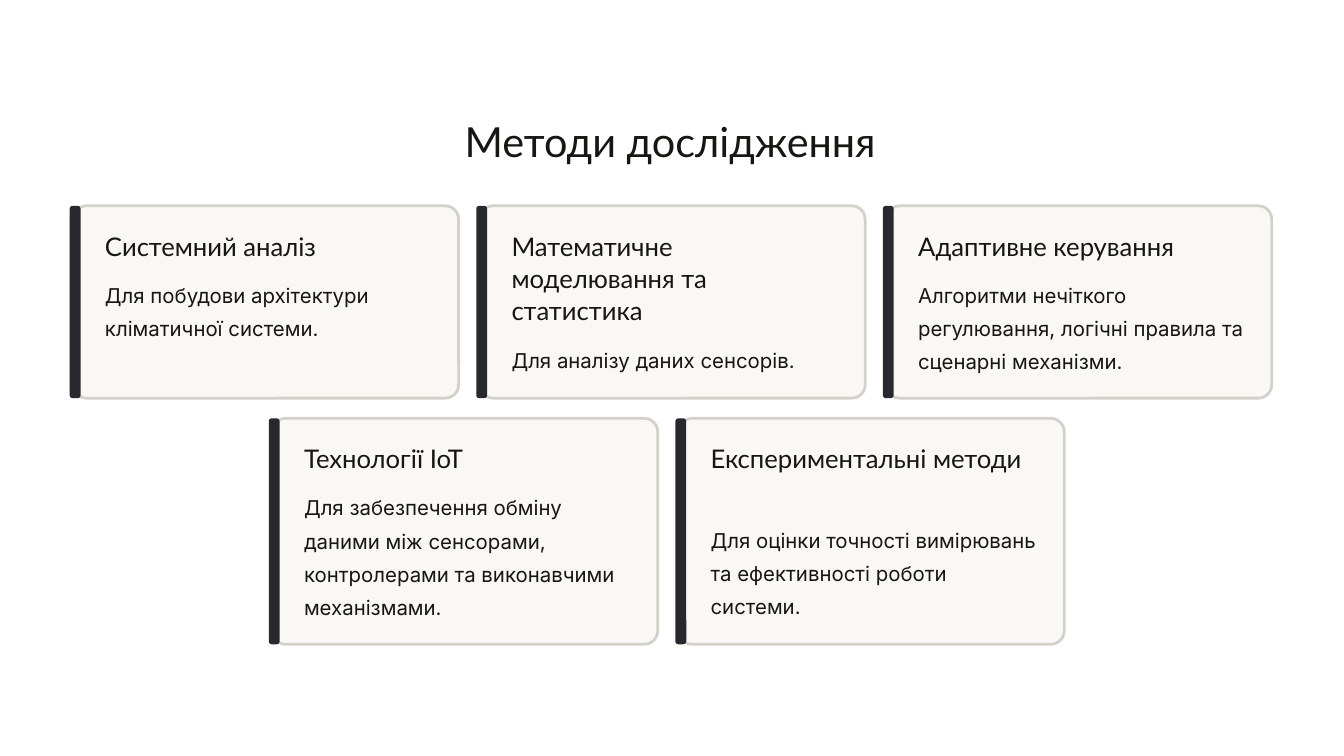
from pptx import Presentation
from pptx.dml.color import RGBColor
from pptx.enum.shapes import MSO_SHAPE as Shape
from pptx.enum.text import PP_ALIGN as Align
from pptx.util import Inches, Pt

INK = RGBColor(0x16, 0x16, 0x13)
CARD = RGBColor(0xF9, 0xF8, 0xF5)
BORDER = RGBColor(0xD3, 0xD1, 0xC9)
ACCENT = RGBColor(0x28, 0x28, 0x2F)

PITCH = 4.84
CARD_W = 4.59
ACCENT_W = 0.13
CARD_SHIFT = 0.04
PAD_X = 0.42
PAD_Y = 0.28
TEXT_W = 3.93
HEADING_LINE = 0.385
BODY_LINE = 0.4
HEADING_GAP = 0.15

ROWS = [
    (0.83, 2.45, 2.29, 0.07, [
        ("Системний аналіз", 1,
         "Для побудови архітектури кліматичної системи.", 2),
        ("Математичне моделювання та статистика", 3,
         "Для аналізу даних сенсорів.", 1),
        ("Адаптивне керування", 1,
         "Алгоритми нечіткого регулювання, логічні правила та сценарні механізми.", 3),
    ]),
    (3.2, 4.98, 2.69, 0.06, [
        ("Технології IoT", 1,
         "Для забезпечення обміну даними між сенсорами, контролерами та виконавчими механізмами.", 4),
        ("Експериментальні методи", 2,
         "Для оцінки точності вимірювань та ефективності роботи системи.", 3),
    ]),
]


def add_text(s, text, x, y, w, h, font, size, leading, align=Align.LEFT):
    tf = s.shapes.add_textbox(Inches(x), Inches(y), Inches(w), Inches(h)).text_frame
    tf.word_wrap = True
    tf.margin_left = tf.margin_right = tf.margin_top = tf.margin_bottom = 0
    p = tf.paragraphs[0]
    p.text = text
    p.alignment = align
    p.line_spacing = Pt(leading)
    r = p.runs[0]
    r.font.name = font
    r.font.size = Pt(size)
    r.font.color.rgb = INK


def add_panel(s, x, y, w, h, radius, fill, border=None):
    sp = s.shapes.add_shape(Shape.ROUNDED_RECTANGLE,
                            Inches(x), Inches(y), Inches(w), Inches(h))
    sp.adjustments[0] = radius
    sp.shadow.inherit = False
    sp.fill.solid()
    sp.fill.fore_color.rgb = fill
    if border is None:
        sp.line.fill.background()
    else:
        sp.line.color.rgb = border
        sp.line.width = Pt(2.4)


def add_card(s, x, y, h, radius, heading, heading_lines, body, body_lines):
    add_panel(s, x + CARD_SHIFT, y, CARD_W, h, radius, CARD, BORDER)
    add_panel(s, x, y, ACCENT_W, h, 0.28, ACCENT)
    heading_h = heading_lines * HEADING_LINE
    text_x, text_y = x + PAD_X, y + PAD_Y
    add_text(s, heading, text_x, text_y, TEXT_W, heading_h, "Lato", 22, 27.5)
    add_text(s, body, text_x, text_y + heading_h + HEADING_GAP, TEXT_W,
             body_lines * BODY_LINE, "Inter", 17.5, 28.5)


def main():
    prs = Presentation()
    prs.slide_width, prs.slide_height = Inches(16), Inches(9)
    s = prs.slides.add_slide(prs.slide_layouts[6])
    add_text(s, "Методи дослідження", 5.46, 1.36, 5.04, 0.62,
             "Lato", 35.5, 44.5, Align.CENTER)
    for left, top, height, radius, cards in ROWS:
        for column, card in enumerate(cards):
            add_card(s, left + column * PITCH, top, height, radius, *card)
    prs.save("out.pptx")


if __name__ == "__main__":
    main()
